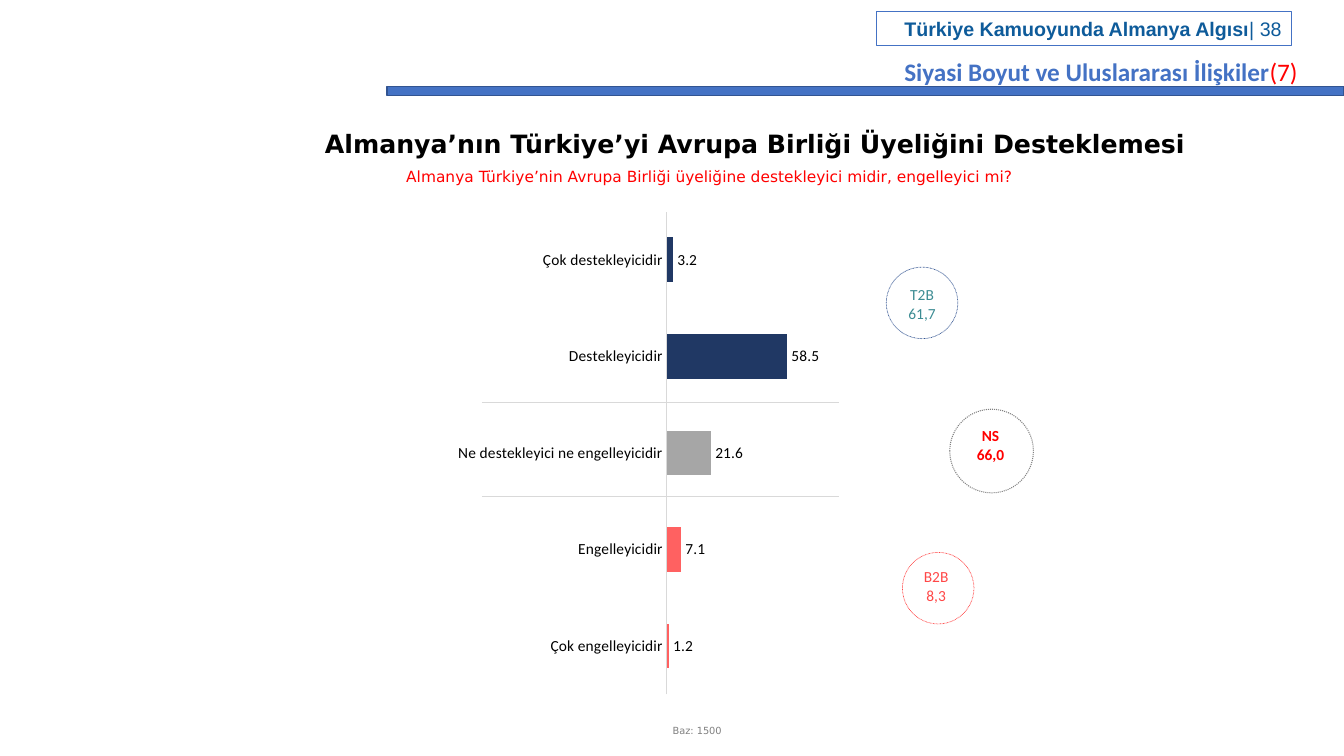
"""Build the survey slide on German support for Turkish EU membership."""
import dataclasses
import typing

import lxml.etree
import pptx
import pptx.chart.data
import pptx.dml.color
import pptx.enum.chart
import pptx.enum.dml
import pptx.enum.shapes
import pptx.enum.text
import pptx.oxml
import pptx.oxml.ns
import pptx.util

Inches = pptx.util.Inches
Pt = pptx.util.Pt
Align = pptx.enum.text.PP_ALIGN
Form = pptx.enum.shapes.MSO_SHAPE

HUES = {
    "blue": "4472C4", "edge": "325491", "head": "0E5B9A", "black": "000000",
    "navy": "203864", "mid": "A6A6A6", "coral": "FF6161", "rule": "D9D9D9",
    "gray": "808080", "red": "FF0000", "teal": "3C8C93", "rose": "FF4747",
}


@dataclasses.dataclass
class Bar:
    name: str
    value: float
    hue: str


@dataclasses.dataclass
class Score:
    ring: tuple[float, float, float]
    edge: str
    width: float
    box: tuple[float, float, float, float]
    text: str
    hue: str
    bold: bool = False


BARS = [
    Bar("Çok destekleyicidir", 3.2, "navy"),
    Bar("Destekleyicidir", 58.5, "navy"),
    Bar("Ne destekleyici ne engelleyicidir", 21.6, "mid"),
    Bar("Engelleyicidir", 7.1, "coral"),
    Bar("Çok engelleyicidir", 1.2, "coral"),
]
SCORES = [
    Score((9.42, 4.06, 0.83), "gray", 0.75, (9.36, 4.18, 0.93, 0.47), "NS\n66,0", "red", True),
    Score((8.79, 2.65, 0.71), "edge", 0.5, (8.87, 2.78, 0.55, 0.47), "T2B\n61,7", "teal"),
    Score((8.95, 5.48, 0.71), "rose", 0.5, (9.03, 5.58, 0.51, 0.47), "B2B\n8,3", "rose"),
]


def tint(name: str) -> pptx.dml.color.RGBColor:
    return pptx.dml.color.RGBColor.from_string(HUES[name])


def style(font: typing.Any, size: float, hue: str, face: str, bold: bool = False) -> None:
    font.size, font.name, font.bold = Pt(size), face, bold
    font.color.rgb = tint(hue)


def write(shape: typing.Any, text: str, *, size: float = 11, hue: str = "black",
          face: str = "Calibri", bold: bool = False, align: typing.Any = Align.CENTER,
          tail: str = "", end: str = "black") -> None:
    frame = shape.text_frame
    frame.word_wrap = True
    frame.auto_size = pptx.enum.text.MSO_AUTO_SIZE.NONE
    for num, line in enumerate(text.split("\n")):
        para = frame.add_paragraph() if num else frame.paragraphs[0]
        para.alignment = align
        run = para.add_run()
        run.text = line
        style(run.font, size, hue, face, bold)
    if tail:
        run = para.add_run()
        run.text = tail
        style(run.font, size, end, face)


def add_box(slide: typing.Any, box: tuple, text: str, **form: typing.Any) -> None:
    write(slide.shapes.add_textbox(*map(Inches, box)), text, **form)


def add_form(slide: typing.Any, kind: typing.Any, box: tuple, edge: str,
             width: float, fill: str = "", dots: bool = False) -> typing.Any:
    shape = slide.shapes.add_shape(kind, *map(Inches, box))
    shape.shadow.inherit = False
    if fill:
        shape.fill.solid()
        shape.fill.fore_color.rgb = tint(fill)
    else:
        shape.fill.background()
    shape.line.color.rgb = tint(edge)
    shape.line.width = Pt(width)
    if dots:
        shape.line.dash_style = pptx.enum.dml.MSO_LINE.ROUND_DOT
    return shape


def add_rule(slide: typing.Any, top: float) -> None:
    rule = slide.shapes.add_connector(
        pptx.enum.shapes.MSO_CONNECTOR.STRAIGHT,
        Inches(4.78), Inches(top), Inches(8.32), Inches(top))
    rule.line.color.rgb = tint("rule")
    rule.line.width = Pt(0.75)
    props = rule._element.spPr
    lxml.etree.SubElement(props, pptx.oxml.ns.qn("a:effectLst"))


def set_plot(chart: typing.Any) -> None:
    area = chart._chartSpace.chart.plotArea
    for old in area.findall(pptx.oxml.ns.qn("c:layout")):
        area.remove(old)
    parts = [("layoutTarget", "inner"), ("xMode", "edge"), ("yMode", "edge"),
             ("x", 0.485), ("y", 0.016), ("w", 0.515), ("h", 0.952)]
    body = "".join(f'<c:{tag} val="{val}"/>' for tag, val in parts)
    area.insert(0, pptx.oxml.parse_xml(
        f'<c:layout {pptx.oxml.ns.nsdecls("c")}>'
        f"<c:manualLayout>{body}</c:manualLayout></c:layout>"))


def add_bars(slide: typing.Any) -> None:
    data = pptx.chart.data.CategoryChartData(number_format="###0.0")
    data.categories = [bar.name for bar in BARS]
    data.add_series("Series 1", [bar.value for bar in BARS])
    chart = slide.shapes.add_chart(
        pptx.enum.chart.XL_CHART_TYPE.BAR_CLUSTERED,
        *map(Inches, (4.3, 2.02, 4.77, 5.03)), data).chart
    chart.has_legend = chart.has_title = False
    style(chart.font, 11, "gray", "Calibri")
    names = chart.category_axis
    names.reverse_order = True
    names.major_tick_mark = pptx.enum.chart.XL_TICK_MARK.NONE
    names.format.line.color.rgb = tint("rule")
    names.format.line.width = Pt(0.75)
    style(names.tick_labels.font, 11, "black", "Calibri")
    scale = chart.value_axis
    scale.minimum_scale, scale.maximum_scale = 0, 120
    scale.has_major_gridlines = scale.visible = False
    plot = chart.plots[0]
    plot.gap_width = 115
    plot.vary_by_categories = False
    plot.has_data_labels = True
    marks = plot.data_labels
    marks.show_value = True
    marks.number_format = "###0.0"
    marks.number_format_is_linked = False
    marks.position = pptx.enum.chart.XL_LABEL_POSITION.OUTSIDE_END
    style(marks.font, 11, "black", "Calibri")
    for num, bar in enumerate(BARS):
        fill = plot.series[0].points[num].format.fill
        fill.solid()
        fill.fore_color.rgb = tint(bar.hue)
    set_plot(chart)


def main() -> None:
    deck = pptx.Presentation()
    deck.slide_width, deck.slide_height = Inches(13.33), Inches(7.5)
    slide = deck.slides.add_slide(deck.slide_layouts[5])
    title = slide.shapes.title
    title.left, title.top, title.width, title.height = map(Inches, (3.04, 1.22, 8.9, 0.4))
    write(title, "Almanya’nın Türkiye’yi Avrupa Birliği Üyeliğini Desteklemesi",
          size=18, face="DejaVu Sans", bold=True)
    add_form(slide, Form.RECTANGLE, (3.84, 0.86, 9.49, 0.09), "edge", 1, "blue")
    head = add_form(slide, Form.RECTANGLE, (8.69, 0.11, 4.12, 0.34), "blue", 0.75)
    write(head, "Türkiye Kamuoyunda Almanya Algısı", size=14, face="Arial", hue="head",
          bold=True, align=Align.RIGHT, tail="| 38", end="head")
    add_bars(slide)
    for top in (3.99, 4.93):
        add_rule(slide, top)
    for score in SCORES:
        left, top, size = score.ring
        add_form(slide, Form.OVAL, (left, top, size, size), score.edge, score.width, dots=True)
        add_box(slide, score.box, score.text, hue=score.hue, bold=score.bold)
    add_box(slide, (1.13, 1.61, 11.82, 0.29),
            "Almanya Türkiye’nin Avrupa Birliği üyeliğine destekleyici midir, engelleyici mi?",
            face="DejaVu Sans", hue="red")
    add_box(slide, (8.87, 0.51, 4.22, 0.4), "Siyasi Boyut ve Uluslararası İlişkiler",
            size=18, hue="blue", bold=True, align=Align.LEFT, tail="(7)", end="red")
    add_box(slide, (6.51, 7.14, 0.81, 0.22), "Baz: 1500",
            size=7, face="DejaVu Sans", hue="gray")
    deck.save("out.pptx")


if __name__ == "__main__":
    main()
